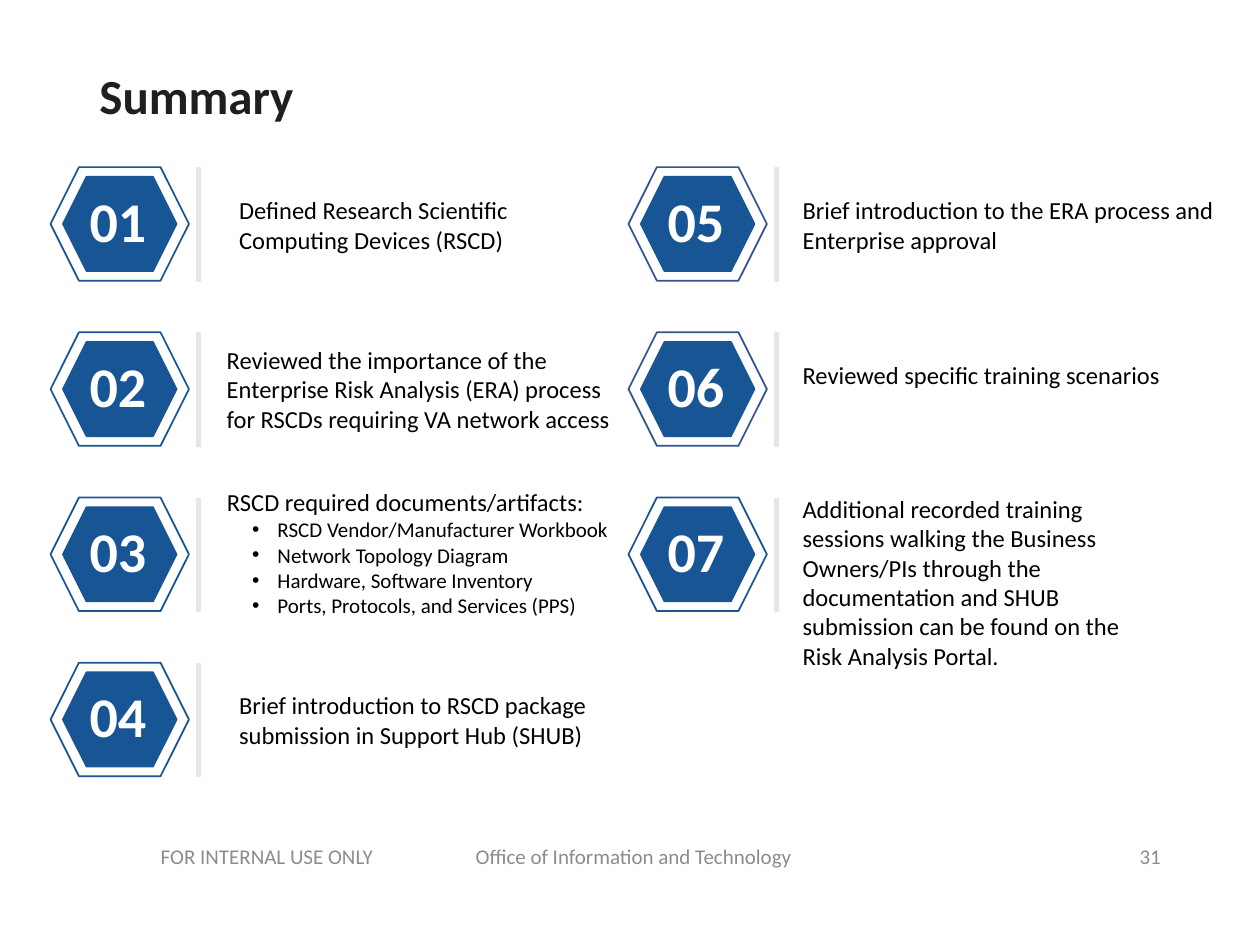
from lxml.etree import SubElement
from pptx import Presentation
from pptx.dml.color import RGBColor
from pptx.enum.shapes import MSO_CONNECTOR as Connector, MSO_SHAPE as Shape
from pptx.enum.text import MSO_ANCHOR as Anchor, MSO_AUTO_SIZE as AutoSize, PP_ALIGN as Align
from pptx.oxml.ns import qn
from pptx.util import Cm, Pt

COLORS = {"title": "1F1F1F", "text": "000000", "footer": "8C8C8C", "white": "FFFFFF",
          "blue": "175594", "indigo": "325491", "rule": "E7E6E6"}
FONT = "Calibri"

TITLE = "Summary"
FOOTER = "FOR INTERNAL USE ONLY\t\tOffice of Information and Technology"
PAGE_NUMBER = "31"
ITEMS = [
    ("Defined Research Scientific Computing Devices (RSCD)", (4.57, 3.81, 7.62, 1.45), "blue"),
    ("Reviewed the importance of the Enterprise Risk Analysis (ERA) process "
     "for RSCDs requiring VA network access", (4.32, 6.83, 8.66, 2.06), "blue"),
    ("RSCD required documents/artifacts:", (4.32, 9.7, 12.7, 2.9), "blue"),
    ("Brief introduction to RSCD package submission in Support Hub (SHUB)",
     (4.57, 13.79, 9.27, 1.45), "blue"),
    ("Brief introduction to the ERA process and Enterprise approval",
     (15.93, 3.81, 8.81, 1.45), "indigo"),
    ("Reviewed specific training scenarios", (15.93, 7.14, 9.32, 0.86), "indigo"),
    ("Additional recorded training sessions walking the Business Owners/PIs through the "
     "documentation and SHUB submission can be found on the Risk Analysis Portal.",
     (15.93, 9.83, 7.37, 3.84), "blue"),
]
DOCUMENTS = {3: ["RSCD Vendor/Manufacturer Workbook", "Network Topology Diagram",
                 "Hardware, Software Inventory", "Ports, Protocols, and Services (PPS)"]}

ROWS = 4
COLUMN_LEFTS = (1.02, 12.67)
TOP, ROW_STEP = 3.37, 3.33
OUTER = (2.79, 2.29)
INNER = (2.29, 1.9)
RULE_GAP, RULE_LENGTH = 2.98, 2.31


def rgb(name):
    return RGBColor.from_string(COLORS[name])


def place(shape, left, top, width, height):
    shape.left, shape.top, shape.width, shape.height = map(Cm, (left, top, width, height))


def write(frame, text, *, size=14, color="text", bold=False, align=Align.LEFT,
          spacing=1.0, bullet=False, tabs=(), new=False):
    para = frame.add_paragraph() if new else frame.paragraphs[0]
    props = para._p.get_or_add_pPr()
    if bullet:
        para.level = 1
        SubElement(props, qn("a:buFont"), typeface="Arial")
        SubElement(props, qn("a:buChar"), char="•")
    else:
        SubElement(props, qn("a:buNone"))
    props.set("marL", str(Cm(1.02 if bullet else 0)))
    props.set("indent", str(Cm(-0.51 if bullet else 0)))
    if tabs:
        stops = SubElement(props, qn("a:tabLst"))
        for stop in tabs:
            SubElement(stops, qn("a:tab"), pos=str(Cm(stop)), algn="l")
    para.alignment, para.line_spacing = align, spacing
    para.space_before = Pt(0)
    span = para.add_run()
    span.text = text
    span.font.name, span.font.size, span.font.bold = FONT, Pt(size), bold
    span.font.color.rgb = rgb(color)


def add_text(page, area, text, anchor=Anchor.TOP, **style):
    box = page.shapes.add_textbox(*map(Cm, area))
    box.text_frame.word_wrap = True
    box.text_frame.vertical_anchor = anchor
    write(box.text_frame, text, **style)


def add_hexagon(group, area, line, fill=None):
    hexagon = group.shapes.add_shape(Shape.HEXAGON, *map(Cm, area))
    hexagon.shadow.inherit = False
    if fill:
        hexagon.fill.solid()
        hexagon.fill.fore_color.rgb = rgb(fill)
    else:
        hexagon.fill.background()
    hexagon.line.color.rgb = rgb(line)
    hexagon.line.width = Pt(1)


def add_badge(page, number, left, top, outline):
    group = page.shapes.add_group_shape()
    inner_left = left + (OUTER[0] - INNER[0]) / 2
    inner_top = top + (OUTER[1] - INNER[1]) / 2
    add_hexagon(group, (inner_left, inner_top, *INNER), "blue", "blue")
    add_hexagon(group, (left, top, *OUTER), outline)
    rule_left = left + RULE_GAP
    rule = group.shapes.add_connector(Connector.STRAIGHT, Cm(rule_left), Cm(top),
                                      Cm(rule_left), Cm(top + RULE_LENGTH))
    SubElement(rule._element.spPr, qn("a:effectLst"))
    rule.line.color.rgb = rgb("rule")
    rule.line.width = Pt(3)
    add_text(page, (left + 0.38, inner_top, 1.96, INNER[1]), f"{number:02}", Anchor.MIDDLE,
             size=32, color="white", bold=True, align=Align.CENTER, spacing=0.9)


def main():
    deck = Presentation()
    deck.slide_width, deck.slide_height = Cm(25.4), Cm(19.05)
    page = deck.slides.add_slide(deck.slide_layouts[1])

    title, body = page.placeholders
    place(title, 1.75, 1.04, 21.89, 1.9)
    title.text_frame.vertical_anchor = Anchor.MIDDLE
    write(title.text_frame, TITLE, size=28, color="title", bold=True, spacing=0.9)

    for index, (text, area, outline) in enumerate(ITEMS):
        column, row = divmod(index, ROWS)
        number = index + 1
        add_badge(page, number, COLUMN_LEFTS[column], TOP + row * ROW_STEP, outline)
        if number in DOCUMENTS:
            place(body, *area)
            body.text_frame.auto_size = AutoSize.NONE
            write(body.text_frame, text)
            for document in DOCUMENTS[number]:
                write(body.text_frame, document, size=12, bullet=True, new=True)
        else:
            add_text(page, area, text)

    add_text(page, (1.75, 16.74, 15.7, 1.02), FOOTER, Anchor.MIDDLE, size=12,
             color="footer", align=Align.CENTER, tabs=(5.08, 7.62))
    add_text(page, (17.93, 16.74, 5.72, 1.02), PAGE_NUMBER, Anchor.MIDDLE, size=12,
             color="footer", align=Align.RIGHT)
    deck.save("out.pptx")


if __name__ == "__main__":
    main()
